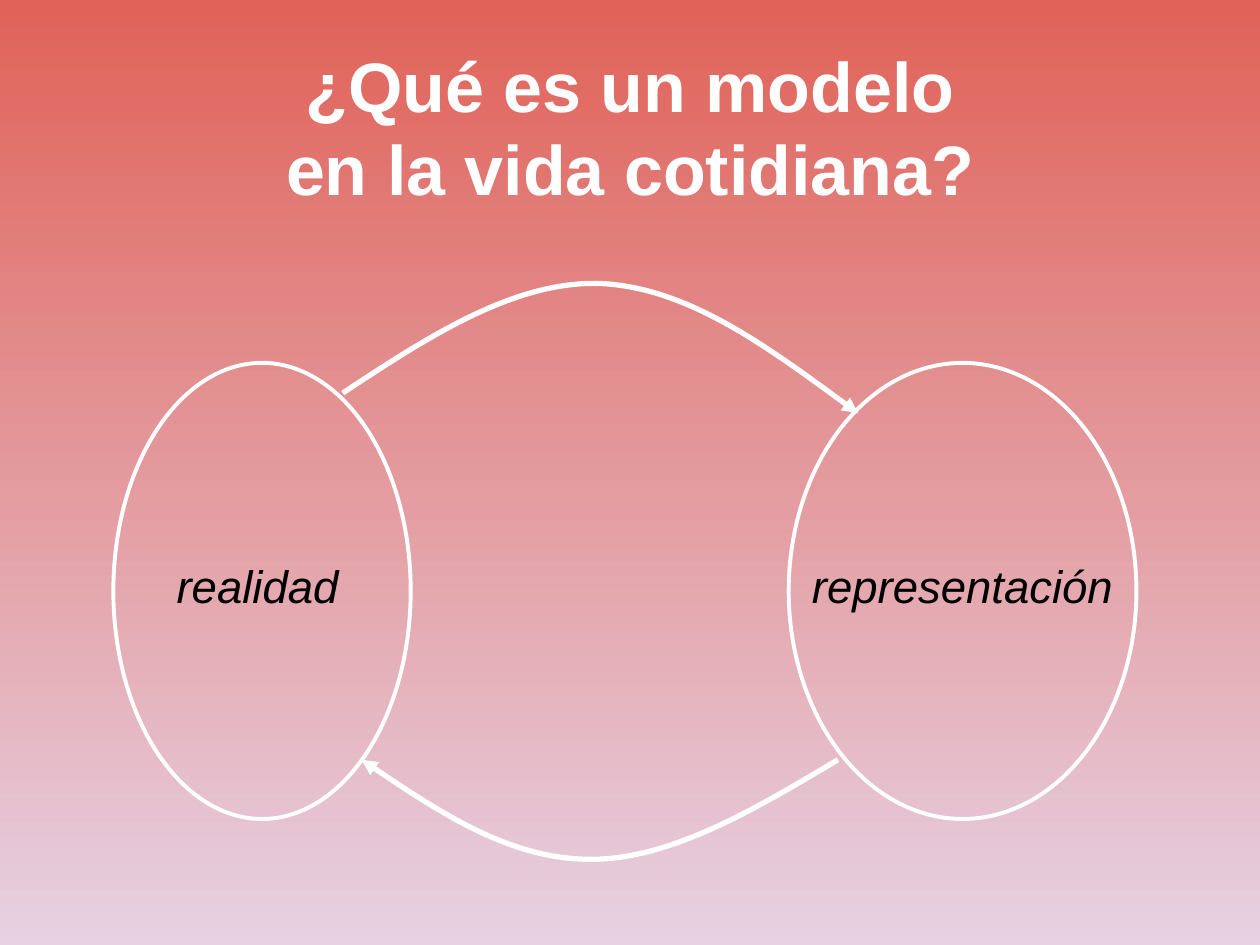
from lxml import etree
from pptx import Presentation
from pptx.dml.color import RGBColor
from pptx.enum.shapes import MSO_SHAPE
from pptx.enum.text import MSO_ANCHOR, PP_ALIGN
from pptx.oxml.ns import qn
from pptx.util import Inches, Pt

OVAL = MSO_SHAPE.OVAL
MIDDLE = MSO_ANCHOR.MIDDLE
CENTER = PP_ALIGN.CENTER

WHITE, BLACK = "FFFFFF", "000000"
SKY = ["E06258", "E7D1E2"]
TITLE = ["¿Qué es un modelo", "en la vida cotidiana?"]
OVAL_TOP, OVAL_HIGH = 2.88, 3.62
LABEL_TOP, LABEL_HIGH = 4.38, 0.53
# oval left, oval width, label left, label width, label
IDEAS = [
    (0.9, 2.36, 1.22, 1.65, "realidad"),
    (6.26, 2.76, 6.34, 2.6, "representación"),
]
# start point, then three points for each Bezier piece
ARROWS = [
    [(2.72, 3.12), (3.4, 2.67), (4.08, 2.23), (4.76, 2.25),
     (5.45, 2.28), (6.13, 2.78), (6.81, 3.28)],
    [(6.65, 6.03), (5.98, 6.43), (5.32, 6.82), (4.69, 6.82),
     (4.06, 6.82), (3.46, 6.43), (2.87, 6.03)],
]


def color(code):
    return RGBColor.from_string(code)


def add_run(para, text, size, code, bold=False, italic=False):
    run = para.add_run()
    run.text = text
    font = run.font
    font.name, font.size = "Arial", Pt(size)
    font.bold, font.italic = bold, italic
    font.color.rgb = color(code)


def outline(shape, width):
    shape.shadow.inherit = False
    shape.fill.background()
    shape.line.color.rgb = color(WHITE)
    shape.line.width = Pt(width)


def add_arrow(slide, points):
    """Draw a Bezier line through the points, with a head at its end."""
    start, *rest = [(Inches(x), Inches(y)) for x, y in points]
    pen = slide.shapes.build_freeform(*start)
    pen.add_line_segments(rest, close=False)
    shape = pen.convert_to_shape()
    outline(shape, 3)
    lines = list(shape.element.iter(qn("a:lnTo")))
    for i in range(0, len(lines), 3):
        curve = etree.Element(qn("a:cubicBezTo"))
        lines[i].addprevious(curve)
        for line in lines[i:i + 3]:
            curve.append(line[0])
            line.getparent().remove(line)
    ln = shape.element.spPr.find(qn("a:ln"))
    etree.SubElement(ln, qn("a:tailEnd"), type="triangle")


def main():
    deck = Presentation()
    deck.slide_width, deck.slide_height = Inches(10), Inches(7.5)
    slide = deck.slides.add_slide(deck.slide_layouts[5])

    fill = slide.background.fill
    fill.gradient()
    fill.gradient_angle = 270
    for stop, code, place in zip(fill.gradient_stops, SKY, (0, 1)):
        stop.color.rgb = color(code)
        stop.position = place

    title = slide.shapes.title
    title.left, title.top = Inches(0.5), Inches(0.3)
    title.width, title.height = Inches(9), Inches(1.4)
    title.text_frame.vertical_anchor = MIDDLE
    para = title.text_frame.paragraphs[0]
    para.alignment = CENTER
    for i, text in enumerate(TITLE):
        if i:
            para.add_line_break()
        add_run(para, text, 40, WHITE, bold=True)

    for left, width, *_ in IDEAS:
        oval = slide.shapes.add_shape(
            OVAL, Inches(left), Inches(OVAL_TOP), Inches(width), Inches(OVAL_HIGH))
        outline(oval, 2.25)

    for *_, left, width, text in IDEAS:
        box = slide.shapes.add_textbox(
            Inches(left), Inches(LABEL_TOP), Inches(width), Inches(LABEL_HIGH))
        box.text_frame.word_wrap = True
        para = box.text_frame.paragraphs[0]
        para.alignment = CENTER
        add_run(para, text, 26, BLACK, italic=True)

    for points in ARROWS:
        add_arrow(slide, points)

    deck.save("out.pptx")


if __name__ == "__main__":
    main()
